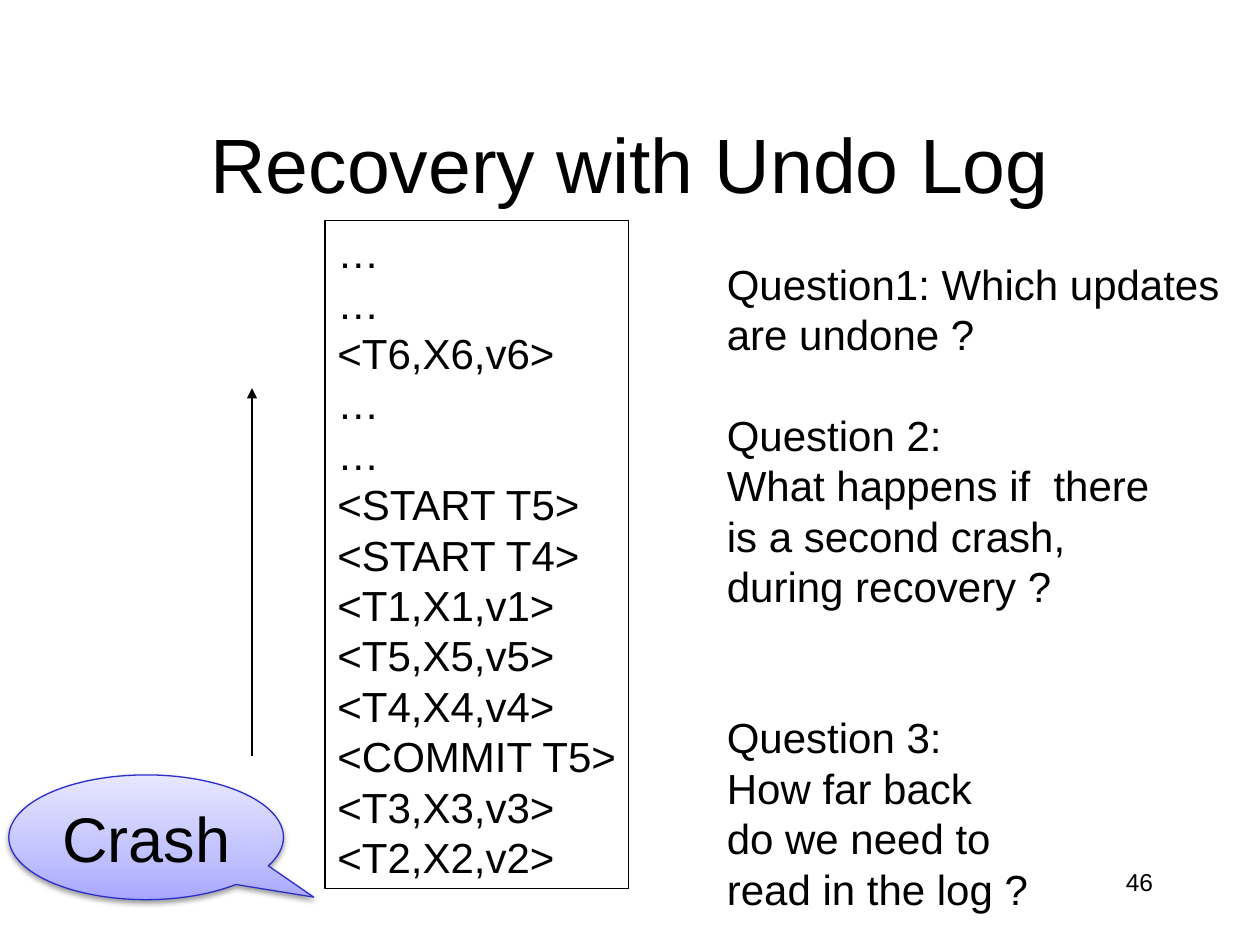
from lxml import etree
from pptx import Presentation
from pptx.dml.color import RGBColor
from pptx.enum.shapes import MSO_CONNECTOR, MSO_SHAPE
from pptx.enum.text import MSO_ANCHOR, PP_ALIGN
from pptx.oxml import parse_xml
from pptx.oxml.ns import nsdecls, qn
from pptx.util import Inches, Pt

COLORS = {
    "text": "000000",
    "line": "000000",
    "callout_line": "2E2ECB",
    "callout_bottom": "A7A7FF",
    "callout_middle": "C1C1FF",
    "callout_top": "E7E7FF",
    "shadow": "000000",
}
FONT = "Arial"
LINE_PITCH = 28.8

LOG_RECORDS = [
    "…", "…", "<T6,X6,v6>", "…", "…", "<START T5>", "<START T4>",
    "<T1,X1,v1>", "<T5,X5,v5>", "<T4,X4,v4>", "<COMMIT T5>",
    "<T3,X3,v3>", "<T2,X2,v2>",
]
# Each question paragraph with the number of lines left free above it
QUESTIONS = [
    ("Question1: Which updates\vare undone ?", 0),
    ("Question 2:", 1),
    ("What happens if  there\vis a second crash,\vduring recovery ?", 0),
    ("Question 3:", 2),
    ("How far back\vdo we need to\vread in the log ?", 0),
]


def color(name):
    return RGBColor.from_string(COLORS[name])


def format_text(frame, size, align=PP_ALIGN.LEFT, anchor=MSO_ANCHOR.TOP, pitch=None):
    frame.vertical_anchor = anchor
    for paragraph in frame.paragraphs:
        paragraph.alignment = align
        if pitch:
            paragraph.line_spacing = Pt(pitch)
        for run in paragraph.runs:
            run.font.size = Pt(size)
            run.font.name = FONT
            run.font.color.rgb = color("text")


def style_line(line, name):
    line.color.rgb = color(name)
    line.width = Pt(0.75)


def add_title(slide, left, top, width, height):
    title = slide.shapes.title
    title.left, title.top, title.width, title.height = left, top, width, height
    title.text_frame.text = "Recovery with Undo Log"
    format_text(title.text_frame, 44, PP_ALIGN.CENTER, MSO_ANCHOR.MIDDLE)


def add_log(slide, left, top, width, height):
    log = slide.shapes.add_shape(MSO_SHAPE.RECTANGLE, left, top, width, height)
    log.shadow.inherit = False
    log.fill.background()
    style_line(log.line, "line")
    log.text_frame.word_wrap = False
    log.text_frame.text = "\n".join(LOG_RECORDS)
    format_text(log.text_frame, 24, pitch=LINE_PITCH)


def add_questions(slide, left, top, width, height):
    frame = slide.shapes.add_textbox(left, top, width, height).text_frame
    frame.word_wrap = False
    for index, (wording, free_lines) in enumerate(QUESTIONS):
        paragraph = frame.add_paragraph() if index else frame.paragraphs[0]
        paragraph.text = wording
        paragraph.space_before = Pt(free_lines * LINE_PITCH)
    format_text(frame, 24, pitch=LINE_PITCH)


def add_scan_arrow(slide, x, bottom, top):
    """Draw the upward arrow: recovery reads the log from its end."""
    arrow = slide.shapes.add_connector(MSO_CONNECTOR.STRAIGHT, x, bottom, x, top)
    style_line(arrow.line, "line")
    properties = arrow._element.spPr
    etree.SubElement(properties.find(qn("a:ln")), qn("a:tailEnd"), type="triangle")
    etree.SubElement(properties, qn("a:effectLst"))


def add_crash(slide, left, top, width, height):
    crash = slide.shapes.add_shape(MSO_SHAPE.OVAL_CALLOUT, left, top, width, height)
    crash.adjustments[0], crash.adjustments[1] = 0.61, 0.48
    crash.fill.gradient()
    crash.fill.gradient_angle = 90
    style_line(crash.line, "callout_line")

    properties = crash._element.spPr
    stops = properties.find(qn("a:gradFill")).find(qn("a:gsLst"))
    for stop in list(stops):
        stops.remove(stop)
    for percent, name in ((0, "callout_bottom"), (35, "callout_middle"), (100, "callout_top")):
        stop = etree.SubElement(stops, qn("a:gs"), pos=str(percent * 1000))
        etree.SubElement(stop, qn("a:srgbClr"), val=COLORS[name])
    properties.append(parse_xml(
        f'<a:effectLst {nsdecls("a")}>'
        f'<a:outerShdw blurRad="{Pt(3.1)}" dist="{Pt(1.6)}" dir="5400000" rotWithShape="0">'
        f'<a:srgbClr val="{COLORS["shadow"]}"><a:alpha val="38000"/></a:srgbClr>'
        '</a:outerShdw></a:effectLst>'
    ))

    crash.text_frame.word_wrap = False
    crash.text_frame.text = "Crash"
    format_text(crash.text_frame, 36, PP_ALIGN.CENTER, MSO_ANCHOR.MIDDLE)


def add_page_number(slide, left, top, width, height):
    frame = slide.shapes.add_textbox(left, top, width, height).text_frame
    frame.word_wrap = True
    frame.text = "46"
    format_text(frame, 14, PP_ALIGN.RIGHT)


def main():
    deck = Presentation()
    deck.slide_width, deck.slide_height = Inches(10), Inches(7.5)
    slide = deck.slides.add_slide(deck.slide_layouts[5])

    add_page_number(slide, Inches(7.17), Inches(6.83), Inches(2.08), Inches(0.5))
    add_title(slide, Inches(0.75), Inches(0.67), Inches(8.5), Inches(1.25))
    add_log(slide, Inches(2.58), Inches(1.75), Inches(2.41), Inches(5.3))
    add_scan_arrow(slide, Inches(2), Inches(6), Inches(3.08))
    add_questions(slide, Inches(5.67), Inches(2), Inches(4.15), Inches(5.35))
    add_crash(slide, Inches(0.07), Inches(6.15), Inches(2.18), Inches(0.99))
    deck.save("out.pptx")


if __name__ == "__main__":
    main()
